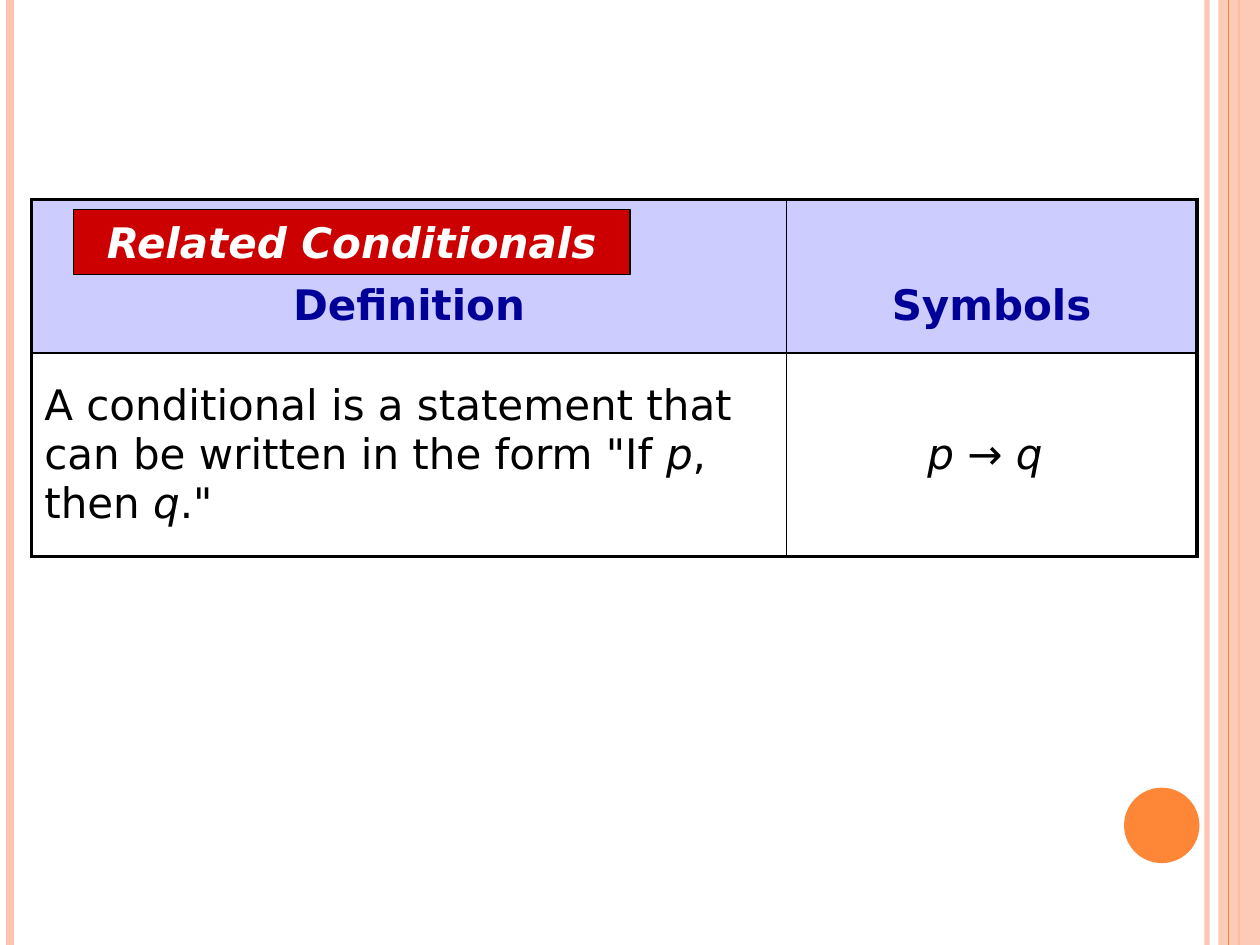
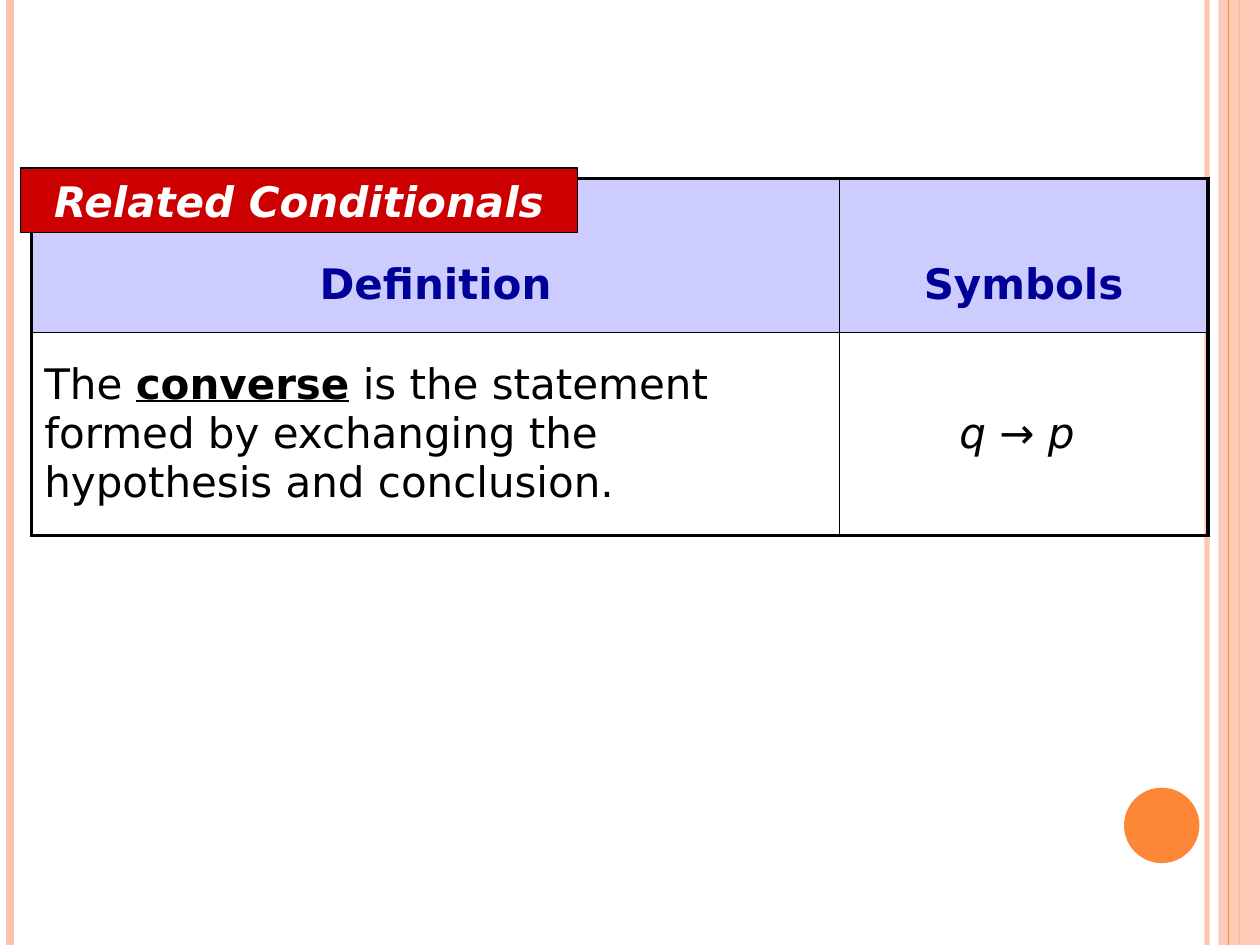
from lxml import etree
from pptx import Presentation
from pptx.dml.color import RGBColor
from pptx.enum import shapes, text
from pptx.oxml import ns
from pptx.util import Cm, Pt

BLACK = RGBColor(0x00, 0x00, 0x00)
WHITE = RGBColor(0xFF, 0xFF, 0xFF)
ORANGE = RGBColor(0xFE, 0x86, 0x37)
PEACH = RGBColor(0xFE, 0xC3, 0xAE)
RED = RGBColor(0xCC, 0x00, 0x00)
NAVY = RGBColor(0x00, 0x00, 0x99)
LAVENDER = RGBColor(0xCC, 0xCC, 0xFF)

WIDTH, HEIGHT = 25.4, 19.05
TABLE_LEFT = 0.64
ROW_HEIGHTS = (3.1, 4.1)
OUTER, INNER = 2.25, 1
HEADINGS = ("Definition", "Symbols")

SLIDES = [
    {
        "table_top": 4.02,
        "columns": (15.21, 8.28),
        "label_at": (1.48, 4.23),
        "definition": [
            ('A conditional is a statement that can be written in the form "If ', ""),
            ("p", "i"),
            (", then ", ""),
            ("q", "i"),
            ('."', ""),
        ],
        "symbols": [("p ", "i"), ("→ ", ""), ("q ", "i")],
    },
    {
        "table_top": 3.6,
        "columns": (16.28, 7.43),
        "label_at": (0.42, 3.39),
        "definition": [
            ("The ", ""),
            ("converse", "bu"),
            (" is the statement formed by exchanging the hypothesis and conclusion.", ""),
        ],
        "symbols": [("q ", "i"), ("→ ", ""), ("p ", "i")],
    },
]


class Deck:
    font_name = "DejaVu Sans"
    font_size = Pt(24)

    def __init__(self):
        self.presentation = Presentation()
        self.presentation.slide_width = Cm(WIDTH)
        self.presentation.slide_height = Cm(HEIGHT)
        self.slide = None

    def add_slide(self):
        self.slide = self.presentation.slides.add_slide(self.presentation.slide_layouts[6])
        self.vertical_line(24.33, PEACH, 3, 93)
        self.vertical_line(0.2, PEACH, 4.5)
        band_line = self.vertical_line(24.98, ORANGE, 1.5)
        band = self.shape(shapes.MSO_SHAPE.RECTANGLE, 24.56, 0, 0.84, HEIGHT, PEACH, opacity=87)
        band_line.begin_connect(band, 0)
        band_line.end_connect(band, 2)
        self.vertical_line(24.77, ORANGE, 0.75)
        self.shape(shapes.MSO_SHAPE.OVAL, 22.66, 15.88, 1.52, 1.52, ORANGE)

    def set_opacity(self, shape, percent):
        for color in shape.element.spPr.iter(ns.qn("a:srgbClr")):
            etree.SubElement(color, ns.qn("a:alpha"), val=str(percent * 1000))

    def vertical_line(self, x, color, width, opacity=100):
        line = self.slide.shapes.add_connector(
            shapes.MSO_CONNECTOR.STRAIGHT, Cm(x), Cm(0), Cm(x), Cm(HEIGHT)
        )
        line.line.color.rgb = color
        line.line.width = Pt(width)
        etree.SubElement(line.element.spPr, ns.qn("a:effectLst"))
        if opacity < 100:
            self.set_opacity(line, opacity)
        return line

    def shape(self, kind, left, top, width, height, color, opacity=100):
        shape = self.slide.shapes.add_shape(kind, Cm(left), Cm(top), Cm(width), Cm(height))
        shape.shadow.inherit = False
        shape.fill.solid()
        shape.fill.fore_color.rgb = color
        shape.line.fill.background()
        if opacity < 100:
            self.set_opacity(shape, opacity)
        return shape

    def fill_text(self, frame, runs, color, alignment, bold=None):
        paragraph = frame.paragraphs[0]
        paragraph.alignment = alignment
        font = paragraph.font
        font.name, font.size, font.bold = self.font_name, self.font_size, bold
        font.color.rgb = color
        for content, style in runs:
            run = paragraph.add_run()
            run.text = content
            if "b" in style:
                run.font.bold = True
            if "i" in style:
                run.font.italic = True
            if "u" in style:
                run.font.underline = True
        return paragraph

    def label(self, content, left, top):
        shape = self.shape(shapes.MSO_SHAPE.RECTANGLE, left, top, 11.22, 1.3, RED)
        shape.line.color.rgb = BLACK
        shape.line.width = Pt(0.75)
        frame = shape.text_frame
        frame.vertical_anchor = text.MSO_ANCHOR.MIDDLE
        paragraph = self.fill_text(frame, [(content, "")], WHITE, text.PP_ALIGN.CENTER, True)
        paragraph.font.italic = True

    def borders(self, cell, widths):
        properties = cell._tc.get_or_add_tcPr()
        for index, (side, width) in enumerate(zip("LRTB", widths)):
            line = etree.Element(ns.qn(f"a:ln{side}"), w=str(Pt(width)))
            fill = etree.SubElement(line, ns.qn("a:solidFill"))
            etree.SubElement(fill, ns.qn("a:srgbClr"), val=str(BLACK))
            properties.insert(index, line)

    def table(self, top, columns, body):
        table = self.slide.shapes.add_table(
            2, 2, Cm(TABLE_LEFT), Cm(top), Cm(sum(columns)), Cm(sum(ROW_HEIGHTS))
        ).table
        table.first_row = table.horz_banding = False
        for column, width in zip(table.columns, columns):
            column.width = Cm(width)
        for row, height in zip(table.rows, ROW_HEIGHTS):
            row.height = Cm(height)
        for index, (heading, runs) in enumerate(zip(HEADINGS, body)):
            header, content = table.cell(0, index), table.cell(1, index)
            header.fill.solid()
            header.fill.fore_color.rgb = LAVENDER
            header.margin_top = Cm(1.3)
            self.fill_text(header.text_frame, [(heading, "")], NAVY, text.PP_ALIGN.CENTER, True)
            content.fill.background()
            alignment = text.PP_ALIGN.CENTER if index else text.PP_ALIGN.LEFT
            self.fill_text(content.text_frame, runs, BLACK, alignment)
            sides = (INNER, OUTER) if index else (OUTER, INNER)
            self.borders(header, (*sides, OUTER, INNER))
            self.borders(content, (*sides, INNER, OUTER))
            for cell in (header, content):
                cell.vertical_anchor = text.MSO_ANCHOR.MIDDLE


def main():
    deck = Deck()
    for item in SLIDES:
        deck.add_slide()
        deck.table(item["table_top"], item["columns"], (item["definition"], item["symbols"]))
        deck.label("Related Conditionals", *item["label_at"])
    deck.presentation.save("out.pptx")


if __name__ == "__main__":
    main()
